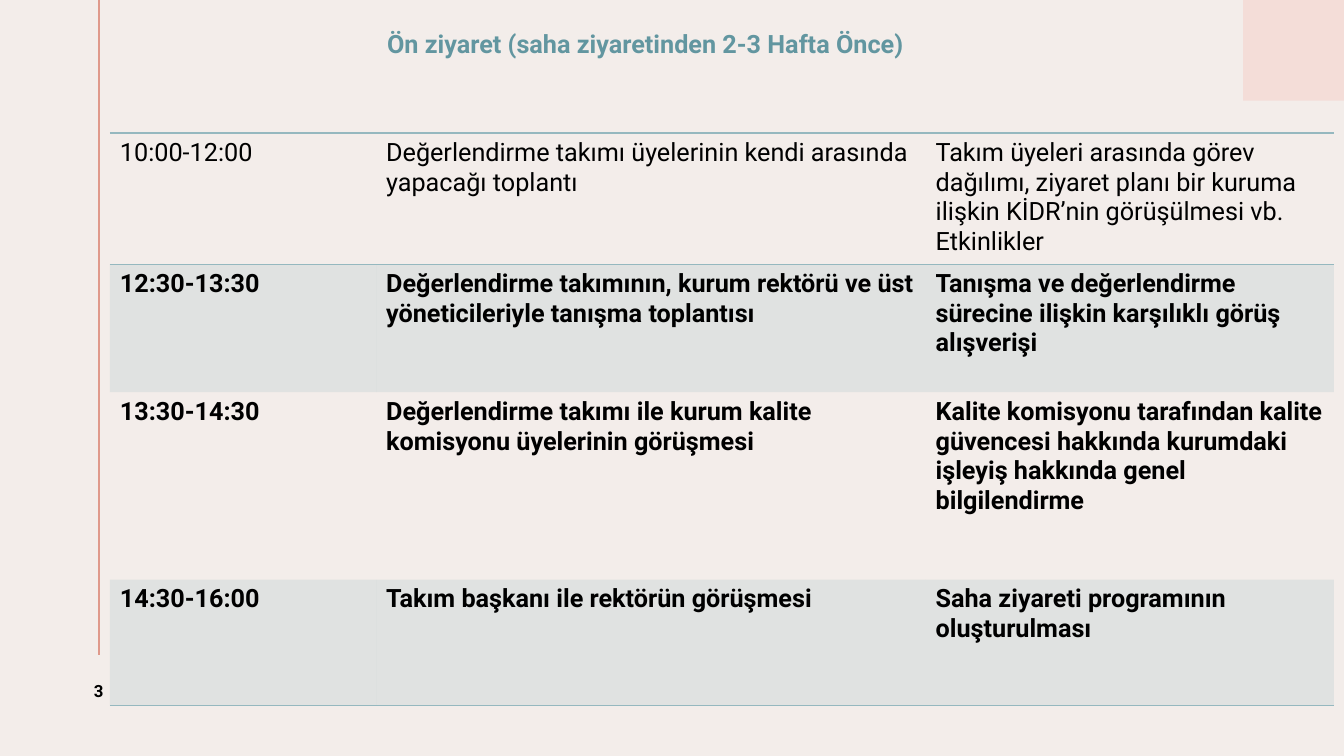
from lxml.etree import SubElement as Sub
from pptx import Presentation
from pptx.dml.color import RGBColor
from pptx.enum.shapes import MSO_CONNECTOR as Conn, MSO_SHAPE as Shape
from pptx.enum.text import MSO_ANCHOR as Anchor, MSO_AUTO_SIZE as Fit, PP_ALIGN as Align
from pptx.oxml import parse_xml
from pptx.oxml.ns import nsdecls, qn
from pptx.util import Inches, Pt

CREAM = RGBColor(0xF3, 0xED, 0xEA)
PINK = RGBColor(0xF4, 0xDD, 0xD8)
ROSE = RGBColor(0xDF, 0x99, 0x8B)
TEAL = RGBColor(0x62, 0x96, 0xA0)
MIST = RGBColor(0x95, 0xB8, 0xBF)
BLACK = RGBColor(0, 0, 0)
PLAIN = "{2D5ABB26-0587-4C30-8999-92F81FD0307C}"

COLS = 2.64, 5.45, 4.05
HEIGHTS = 1.3, 1.27, 1.86, 1.25
ROWS = [
    ("10:00-12:00",
     "Değerlendirme takımı üyelerinin kendi arasında yapacağı toplantı",
     "Takım üyeleri arasında görev dağılımı, ziyaret planı bir kuruma "
     "ilişkin KİDR’nin görüşülmesi vb. Etkinlikler"),
    ("12:30-13:30",
     "Değerlendirme takımının, kurum rektörü ve üst yöneticileriyle tanışma toplantısı",
     "Tanışma ve değerlendirme sürecine ilişkin karşılıklı görüş alışverişi"),
    ("13:30-14:30",
     "Değerlendirme takımı ile kurum kalite komisyonu üyelerinin görüşmesi",
     "Kalite komisyonu tarafından kalite güvencesi hakkında kurumdaki "
     "işleyiş hakkında genel bilgilendirme"),
    ("14:30-16:00",
     "Takım başkanı ile rektörün görüşmesi",
     "Saha ziyareti programının oluşturulması"),
]


class Deck:
    base = {"name": "Roboto", "size": Pt(18), "bold": True}

    def __init__(self):
        self.prs = Presentation()
        self.prs.slide_width, self.prs.slide_height = Inches(13.33), Inches(7.5)
        self.slide = self.prs.slides.add_slide(self.prs.slide_layouts[5])
        self.shapes = self.slide.shapes
        fill = self.slide.background.fill
        fill.solid()
        fill.fore_color.rgb = CREAM

    def label(self, frame, text, color=BLACK, align=Align.LEFT, **style):
        """Put one styled run into a text frame and return it."""
        frame.word_wrap = True
        para = frame.paragraphs[0]
        para.alignment = align
        run = para.add_run()
        run.text = text
        for key, value in {**self.base, **style}.items():
            setattr(run.font, key, value)
        run.font.color.rgb = color
        return run

    def block(self, box, color):
        shape = self.shapes.add_shape(Shape.RECTANGLE, *map(Inches, box))
        shape.shadow.inherit = False
        shape.fill.solid()
        shape.fill.fore_color.rgb = color
        shape.line.fill.background()

    def rule(self, start, end, color, width):
        line = self.shapes.add_connector(Conn.STRAIGHT, *map(Inches, start + end))
        line.line.color.rgb = color
        line.line.width = Pt(width)
        Sub(line.element.spPr, qn("a:effectLst"))

    def title(self, box, text):
        shape = self.shapes.title
        for key, value in zip(("left", "top", "width", "height"), box):
            setattr(shape, key, Inches(value))
        frame = shape.text_frame
        frame.vertical_anchor = Anchor.MIDDLE
        frame.auto_size = Fit.SHAPE_TO_FIT_TEXT
        self.label(frame, text, TEAL, Align.CENTER)

    def number(self, box, text):
        frame = self.shapes.add_textbox(*map(Inches, box)).text_frame
        frame.vertical_anchor = Anchor.MIDDLE
        run = self.label(frame, text, align=Align.CENTER, size=Pt(12))
        run._r.get_or_add_rPr().set("spc", "150")

    def tint(self, cell):
        """Fill a cell with the pale, see-through band colour."""
        cell.fill.solid()
        cell.fill.fore_color.rgb = MIST
        color = next(cell._tc.tcPr.iter(qn("a:srgbClr")))
        Sub(color, qn("a:alpha")).set("val", "20000")

    def edge(self, cell, side):
        """Draw one border, T for top or B for bottom."""
        cell._tc.get_or_add_tcPr().insert(0, parse_xml(
            f'<a:ln{side} {nsdecls("a")} w="12700"><a:solidFill>'
            f'<a:srgbClr val="{MIST}"/></a:solidFill></a:ln{side}>'))

    def table(self, left, top):
        frame = self.shapes.add_table(
            len(ROWS), len(COLS), Inches(left), Inches(top),
            Inches(sum(COLS)), Inches(sum(HEIGHTS)))
        next(frame.element.iter(qn("a:tableStyleId"))).text = PLAIN
        grid = frame.table
        for col, width in zip(grid.columns, COLS):
            col.width = Inches(width)
        for i, (row, height) in enumerate(zip(grid.rows, HEIGHTS)):
            row.height = Inches(height)
            for cell, text in zip(row.cells, ROWS[i]):
                self.label(cell.text_frame, text, bold=i > 0)
                if i % 2:
                    self.tint(cell)
                else:
                    cell.fill.background()
                if i in (0, len(ROWS) - 1):
                    self.edge(cell, "B")
                if i == 0:
                    self.edge(cell, "T")


def main():
    deck = Deck()
    deck.block((12.33, 0, 1, 1), PINK)
    deck.rule((0.98, 0), (0.98, 6.5), ROSE, 1.5)
    deck.number((0.45, 6.5, 1.06, 0.71), "3")
    deck.table(1.09, 1.32)
    deck.title((0.75, 0.23, 11.3, 0.4), "Ön ziyaret (saha ziyaretinden 2-3 Hafta Önce)")
    deck.prs.save("out.pptx")


if __name__ == "__main__":
    main()
